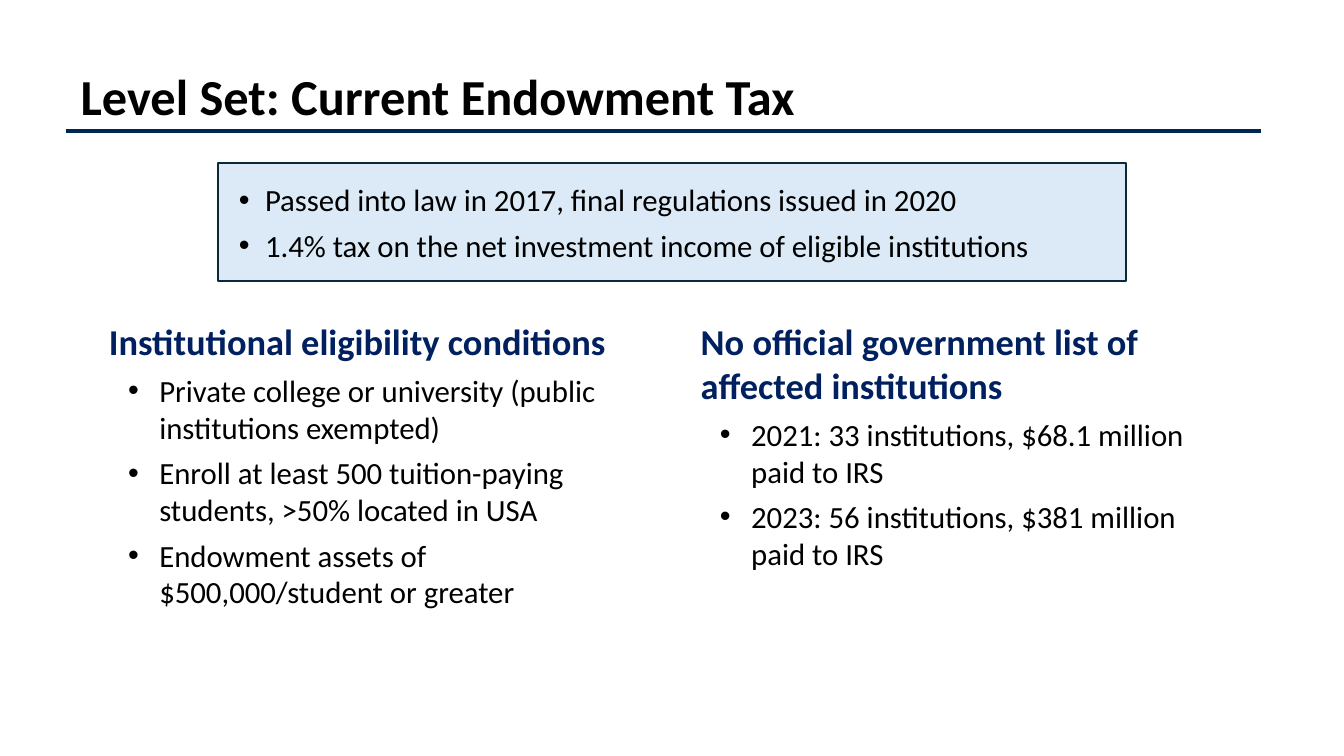
from lxml import etree
from pptx import Presentation
from pptx.dml.color import RGBColor
from pptx.enum.shapes import MSO_CONNECTOR, MSO_SHAPE
from pptx.enum.text import MSO_ANCHOR, MSO_AUTO_SIZE, PP_ALIGN
from pptx.oxml.ns import qn
from pptx.util import Pt

PX = 9144  # EMU per px, 100 px to the inch
FONT = "Calibri"
BLACK = RGBColor(0x00, 0x00, 0x00)
HEADING_BLUE = RGBColor(0x00, 0x20, 0x60)
RULE_BLUE = RGBColor(0x00, 0x26, 0x54)
BOX_FILL = RGBColor(0xDC, 0xEA, 0xF7)
BOX_LINE = RGBColor(0x09, 0x2A, 0x39)
LEFT, MIDDLE, TOP = PP_ALIGN.LEFT, MSO_ANCHOR.MIDDLE, MSO_ANCHOR.TOP
NO_AUTOFIT = MSO_AUTO_SIZE.NONE
STRAIGHT, RECTANGLE = MSO_CONNECTOR.STRAIGHT, MSO_SHAPE.RECTANGLE

KEY_FACTS = [
    "Passed into law in 2017, final regulations issued in 2020",
    "1.4% tax on the net investment income of eligible institutions",
]
ELIGIBILITY = [
    "Private college or university (public institutions exempted)",
    "Enroll at least 500 tuition-paying students, >50% located in USA",
    "Endowment assets of $500,000/student or greater",
]
TAX_PAID = [
    "2021: 33 institutions, $68.1 million paid to IRS",
    "2023: 56 institutions, $381 million paid to IRS",
]


def place(sp, box):
    sp.left, sp.top, sp.width, sp.height = (v * PX for v in box)


def prepare(sp, anchor):
    tf = sp.text_frame
    tf.word_wrap = True
    tf.auto_size = NO_AUTOFIT
    tf.vertical_anchor = anchor
    return tf


def format_text(p, size, color=BLACK, bold=False):
    p.alignment = LEFT
    for r in p.runs:
        r.font.name = FONT
        r.font.size = Pt(size)
        r.font.bold = bold
        r.font.color.rgb = color


def set_bullet(p, indent, hanging, char=None):
    pPr = p._p.get_or_add_pPr()
    pPr.set("marL", str(indent * PX))
    pPr.set("indent", str(-hanging * PX))
    if char:
        etree.SubElement(pPr, qn("a:buFont")).set("typeface", "Arial")
        etree.SubElement(pPr, qn("a:buChar")).set("char", char)
    else:
        etree.SubElement(pPr, qn("a:buNone"))


def fill_list(tf, items, indent, hanging, heading=None):
    lines = [heading] + items if heading else items
    for i, line in enumerate(lines):
        p = tf.paragraphs[0] if i == 0 else tf.add_paragraph()
        p.text = line
        if heading and i == 0:
            set_bullet(p, 0, 0)
            format_text(p, 26, HEADING_BLUE, True)
        else:
            p.level = 1 if heading else 0
            set_bullet(p, indent, hanging, "•")
            format_text(p, 22)
        p.space_before = Pt(0)
        p.space_after = Pt(6 if i < len(lines) - 1 else 0)


def add_title(s, box, text):
    sp = s.shapes.title
    place(sp, box)
    tf = prepare(sp, MIDDLE)
    tf.text = text
    format_text(tf.paragraphs[0], 36, bold=True)
    # Rule along the bottom of the title
    x, y, w, h = box
    rule = s.shapes.add_connector(
        STRAIGHT, (x - 5) * PX, (y + h) * PX, (x + w + 1) * PX, (y + h) * PX)
    rule.line.color.rgb = RULE_BLUE
    rule.line.width = Pt(3)
    etree.SubElement(rule._element.spPr, qn("a:effectLst"))


def add_key_facts(s, box, items):
    sp = s.shapes.add_shape(RECTANGLE, *(v * PX for v in box))
    sp.shadow.inherit = False
    sp.fill.solid()
    sp.fill.fore_color.rgb = BOX_FILL
    sp.line.color.rgb = BOX_LINE
    sp.line.width = Pt(1.5)
    fill_list(prepare(sp, MIDDLE), items, 37, 26)


def add_column(sp, box, heading, items):
    place(sp, box)
    fill_list(prepare(sp, TOP), items, 50, 31, heading)


def main():
    prs = Presentation()
    prs.slide_width, prs.slide_height = 1333 * PX, 750 * PX
    s = prs.slides.add_slide(prs.slide_layouts.get_by_name("Two Content"))

    # Title and key facts
    add_title(s, (70, 60, 1180, 70), "Level Set: Current Endowment Tax")
    add_key_facts(s, (216, 162, 901, 117), KEY_FACTS)

    # Two columns
    add_column(s.placeholders[1], (98, 312, 550, 363),
               "Institutional eligibility conditions", ELIGIBILITY)
    add_column(s.placeholders[2], (685, 312, 550, 320),
               "No official government list of affected institutions", TAX_PAID)

    prs.save("out.pptx")


if __name__ == "__main__":
    main()
